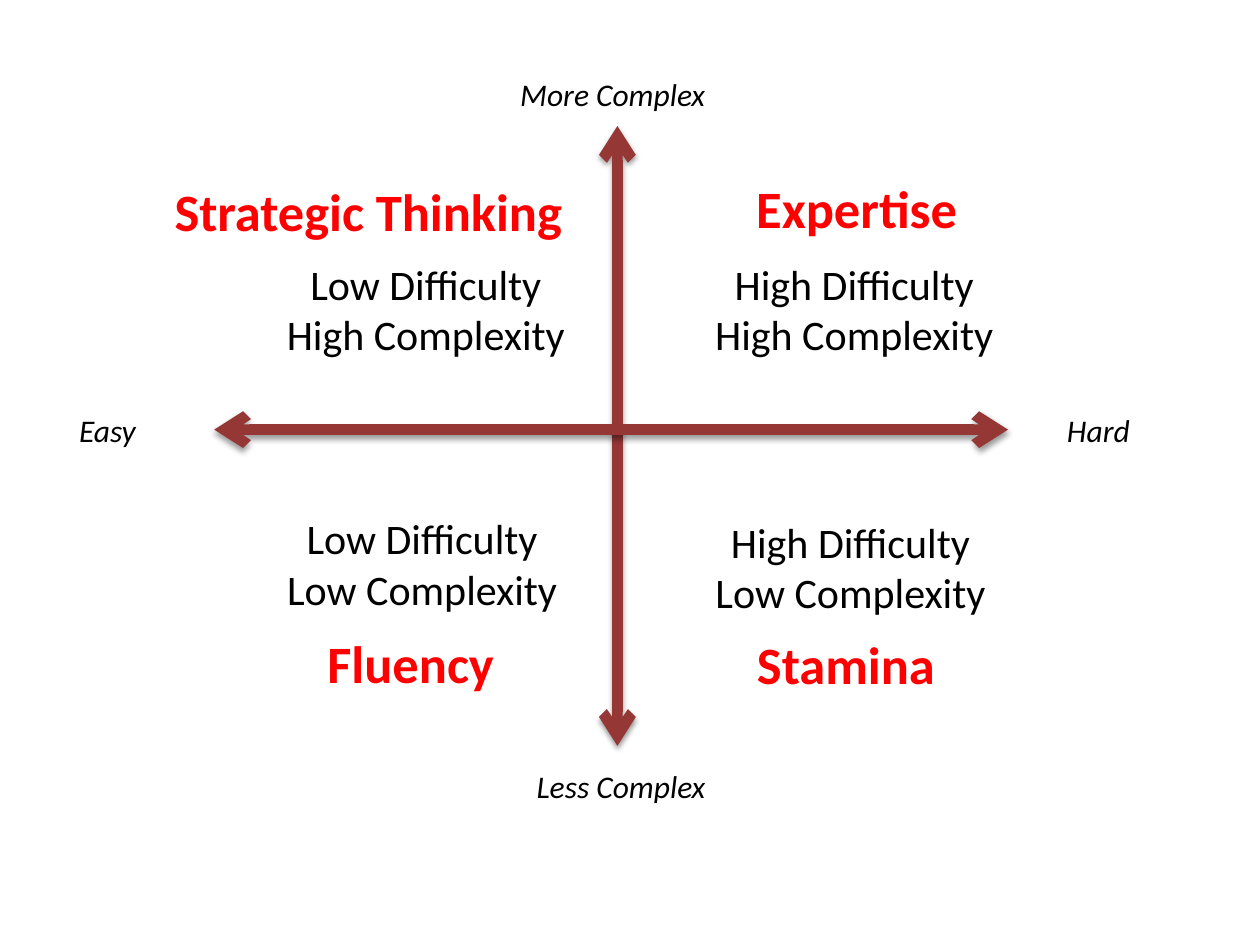
import dataclasses

import lxml.etree
import pptx
import pptx.dml.color
import pptx.enum.shapes
import pptx.enum.text
import pptx.oxml
import pptx.oxml.ns
import pptx.slide
import pptx.util

Inches = pptx.util.Inches
FONT = "Calibri"
BLACK, RED, MAROON = "000000", "FF0000", "953735"
CENTRE_X, CENTRE_Y = 4.9, 3.41
AXIS_EFFECTS = (
    f'<a:effectLst {pptx.oxml.ns.nsdecls("a")}>'
    '<a:outerShdw blurRad="39370" dist="20320" dir="5400000" rotWithShape="0">'
    '<a:srgbClr val="000000"><a:alpha val="38000"/></a:srgbClr>'
    "</a:outerShdw></a:effectLst>"
)


@dataclasses.dataclass(frozen=True)
class Axis:
    start: tuple[float, float]
    end: tuple[float, float]


@dataclasses.dataclass(frozen=True)
class Label:
    text: str
    left: float
    top: float
    width: float
    height: float


AXES = [
    Axis((CENTRE_X, 1), (CENTRE_X, 5.92)),
    Axis((8, CENTRE_Y), (1.7, CENTRE_Y)),
]
AXIS_ENDS = [
    Label("Easy", 0.53, 3.21, 0.73, 0.4),
    Label("Hard", 8.37, 3.21, 0.77, 0.4),
    Label("More Complex", 4.03, 0.55, 1.75, 0.4),
    Label("Less Complex", 4.16, 6.04, 1.62, 0.4),
]
DESCRIPTIONS = [
    Label("Low Difficulty\nHigh Complexity", 2.16, 2, 2.44, 1.21),
    Label("High Difficulty\nHigh Complexity", 5.56, 2, 2.44, 0.91),
    Label("Low Difficulty\nLow Complexity", 2.16, 4.02, 2.38, 0.91),
    Label("High Difficulty\nLow Complexity", 5.56, 4.05, 2.38, 0.91),
]
QUADRANT_NAMES = [
    Label("Fluency", 2.49, 4.96, 1.54, 0.61),
    Label("Stamina", 5.9, 4.97, 1.63, 0.61),
    Label("Strategic Thinking", 1.26, 1.37, 3.33, 0.61),
    Label("Expertise", 5.9, 1.35, 1.8, 0.61),
]


def colour(value: str) -> pptx.dml.color.RGBColor:
    return pptx.dml.color.RGBColor.from_string(value)


def draw_axis(page: pptx.slide.Slide, axis: Axis) -> None:
    connector = page.shapes.add_connector(
        pptx.enum.shapes.MSO_CONNECTOR.STRAIGHT,
        *map(Inches, axis.start + axis.end),
    )
    connector.line.width = pptx.util.Pt(6)
    connector.line.color.rgb = colour(MAROON)
    properties = connector._element.spPr
    outline = properties.find(pptx.oxml.ns.qn("a:ln"))
    for tag in ("a:headEnd", "a:tailEnd"):
        lxml.etree.SubElement(outline, pptx.oxml.ns.qn(tag), type="arrow")
    properties.append(pptx.oxml.parse_xml(AXIS_EFFECTS))


def draw_label(
    page: pptx.slide.Slide,
    label: Label,
    *,
    size: int,
    color: str = BLACK,
    bold: bool = False,
    italic: bool = False,
    centred: bool = True,
) -> None:
    box = page.shapes.add_textbox(
        *map(Inches, (label.left, label.top, label.width, label.height))
    )
    frame = box.text_frame
    frame.text = label.text
    frame.word_wrap = False
    frame.auto_size = pptx.enum.text.MSO_AUTO_SIZE.SHAPE_TO_FIT_TEXT
    alignment = pptx.enum.text.PP_ALIGN
    for para in frame.paragraphs:
        para.alignment = alignment.CENTER if centred else alignment.LEFT
        for span in para.runs:
            span.font.name = FONT
            span.font.size = pptx.util.Pt(size)
            span.font.bold = bold
            span.font.italic = italic
            span.font.color.rgb = colour(color)


def main() -> None:
    deck = pptx.Presentation()
    deck.slide_width, deck.slide_height = Inches(10), Inches(7.5)
    page = deck.slides.add_slide(deck.slide_layouts[6])
    for axis in AXES:
        draw_axis(page, axis)
    for label in AXIS_ENDS:
        draw_label(page, label, size=18, italic=True, centred=False)
    for label in DESCRIPTIONS:
        draw_label(page, label, size=24)
    for label in QUADRANT_NAMES:
        draw_label(page, label, size=30, color=RED, bold=True)
    deck.save("out.pptx")


if __name__ == "__main__":
    main()
